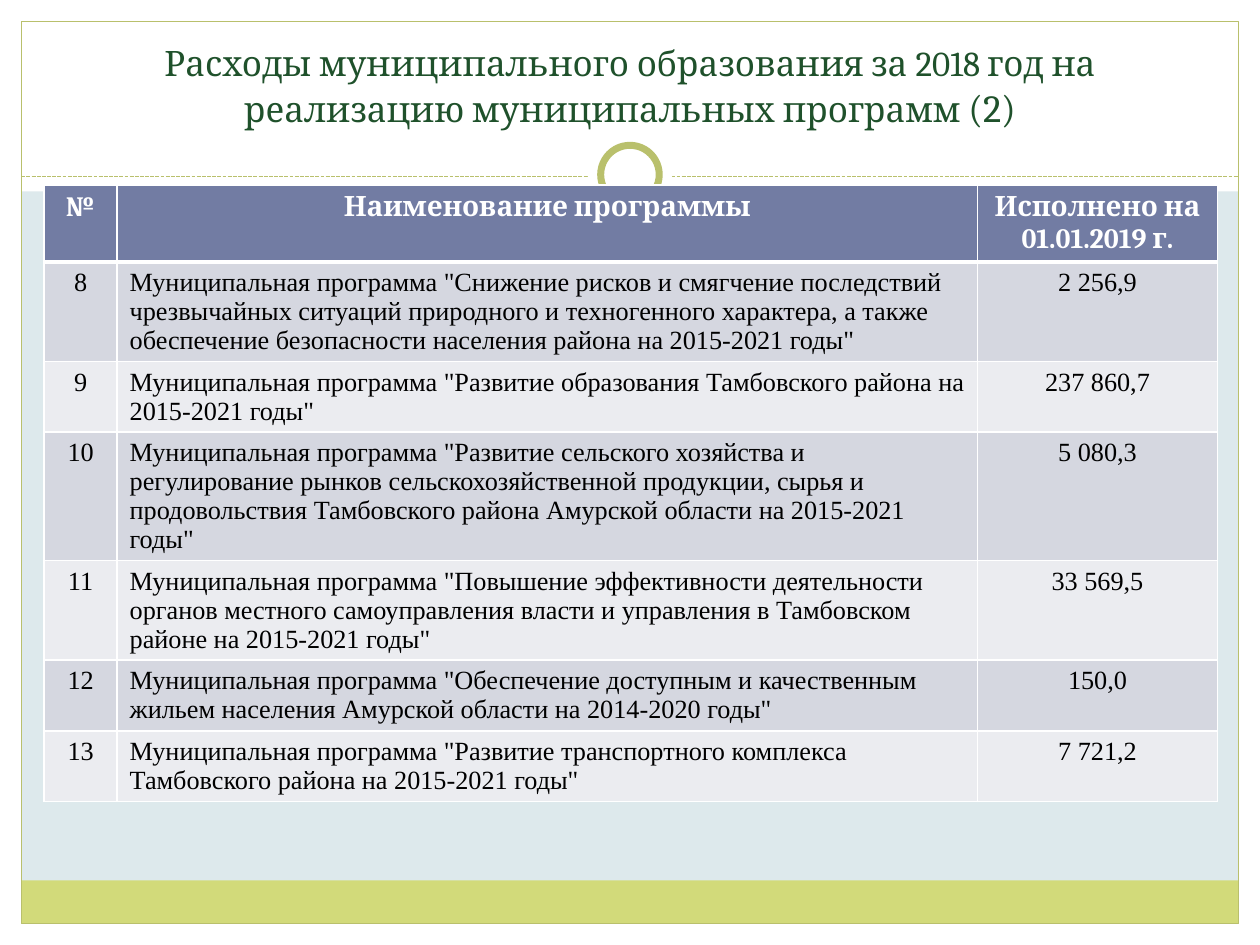
from lxml import etree
from pptx import Presentation
from pptx.dml.color import RGBColor
from pptx.enum.dml import MSO_LINE
from pptx.enum.shapes import MSO_CONNECTOR, MSO_SHAPE
from pptx.enum.text import MSO_ANCHOR, MSO_AUTO_SIZE, PP_ALIGN
from pptx.oxml.ns import qn
from pptx.util import Cm, Pt

RECTANGLE, OVAL = MSO_SHAPE.RECTANGLE, MSO_SHAPE.OVAL
STRAIGHT, DASH = MSO_CONNECTOR.STRAIGHT, MSO_LINE.SQUARE_DOT
CENTER, LEFT = PP_ALIGN.CENTER, PP_ALIGN.LEFT
BOTTOM, NO_FIT = MSO_ANCHOR.BOTTOM, MSO_AUTO_SIZE.NONE

WHITE = RGBColor(0xFF, 0xFF, 0xFF)
BLACK = RGBColor(0x00, 0x00, 0x00)
BACKGROUND = RGBColor(0xDD, 0xE9, 0xEC)
LIME = RGBColor(0xD2, 0xDA, 0x7A)
OLIVE = RGBColor(0xB9, 0xC0, 0x6C)
DARK_GREEN = RGBColor(0x1F, 0x51, 0x2B)
HEADER_FILL = RGBColor(0x72, 0x7C, 0xA3)
BAND_FILLS = (RGBColor(0xD5, 0xD7, 0xE0), RGBColor(0xEB, 0xEC, 0xF0))

COLUMN_WIDTHS = (1.47, 17.35, 4.83)
ROW_HEIGHT = 1.04
HEADER = ("№", "Наименование программы", "Исполнено на 01.01.2019 г.")
PROGRAMS = (
    ("8", "Снижение рисков и смягчение последствий чрезвычайных ситуаций природного "
     "и техногенного характера, а также обеспечение безопасности населения района "
     "на 2015-2021 годы", "2 256,9"),
    ("9", "Развитие образования Тамбовского района на 2015-2021 годы", "237 860,7"),
    ("10", "Развитие сельского хозяйства и регулирование рынков сельскохозяйственной "
     "продукции, сырья и продовольствия Тамбовского района Амурской области "
     "на 2015-2021 годы", "5 080,3"),
    ("11", "Повышение эффективности деятельности органов местного самоуправления "
     "власти и управления в Тамбовском районе на 2015-2021 годы", "33 569,5"),
    ("12", "Обеспечение доступным и качественным жильем населения Амурской области "
     "на 2014-2020 годы", "150,0"),
    ("13", "Развитие транспортного комплекса Тамбовского района на 2015-2021 годы",
     "7 721,2"),
)


def add_plain_shape(slide, kind, box, fill=None, line=None, line_width=0.75):
    """Add a shadowless shape with an optional fill and outline."""
    shape = slide.shapes.add_shape(kind, *(Cm(length) for length in box))
    shape.shadow.inherit = False
    if fill is None:
        shape.fill.background()
    else:
        shape.fill.solid()
        shape.fill.fore_color.rgb = fill
    if line is None:
        shape.line.fill.background()
    else:
        shape.line.color.rgb = line
        shape.line.width = Pt(line_width)


def add_frame(slide, box, margin=0.43, header_height=3.86, footer_height=0.87):
    """Draw the white margins, the footer band and the outline inside the box."""
    left, top, width, height = box
    right, bottom = left + width, top + height
    inner_width = width - 2 * margin
    for white_box in (
        (left, bottom - margin, width, margin),
        (left, top, width, header_height),
        (left, top, margin, height),
        (right - margin, top, margin, height),
    ):
        add_plain_shape(slide, RECTANGLE, white_box, WHITE)
    footer_top = bottom - margin - footer_height
    add_plain_shape(slide, RECTANGLE,
                    (left + margin, footer_top, inner_width, footer_height), LIME)
    add_plain_shape(slide, RECTANGLE,
                    (left + margin, top + margin, inner_width, height - 2 * margin),
                    line=OLIVE)


def add_divider(slide, box):
    """Draw a dashed line with a ring at its middle, the ring as tall as the box."""
    left, top, width, height = box
    line_top = Cm(top + 0.89)
    connector = slide.shapes.add_connector(
        STRAIGHT, Cm(left), line_top, Cm(left + width), line_top)
    connector.line.color.rgb = OLIVE
    connector.line.width = Pt(0.75)
    connector.line.dash_style = DASH
    etree.SubElement(connector.element.spPr, qn("a:effectLst"))
    ring_left, inset = left + (width - height) / 2, 0.26
    ring_size = height - 2 * inset
    add_plain_shape(slide, OVAL, (ring_left, top, height, height), WHITE)
    add_plain_shape(slide, OVAL,
                    (ring_left + inset, top + inset, ring_size, ring_size),
                    WHITE, OLIVE, 4)


def set_title(slide, box):
    """Place the title above the frame and format its two runs."""
    title = slide.shapes.title
    slide.shapes.element.append(title.element)
    title.left, title.top, title.width, title.height = (Cm(length) for length in box)
    text_frame = title.text_frame
    text_frame.auto_size = NO_FIT
    text_frame.word_wrap = True
    text_frame.vertical_anchor = BOTTOM
    paragraph = text_frame.paragraphs[0]
    paragraph.alignment = CENTER
    paragraph.font.name = "Cambria"
    paragraph.font.color.rgb = DARK_GREEN
    for text, size in (
        ("Расходы муниципального образования за 2018 год на реализацию "
         "муниципальных программ ", 20),
        ("(2)", 22),
    ):
        run = paragraph.add_run()
        run.text = text
        run.font.size = Pt(size)


def set_borders(cell, bottom_width):
    """Give the cell white borders, with its own width at the bottom."""
    properties = cell._tc.get_or_add_tcPr()
    for index, side in enumerate(("lnL", "lnR", "lnT", "lnB")):
        width = bottom_width if side == "lnB" else 1
        border = etree.Element(qn(f"a:{side}"), w=str(Pt(width)))
        fill = etree.SubElement(border, qn("a:solidFill"))
        etree.SubElement(fill, qn("a:srgbClr"), val=str(WHITE))
        properties.insert(index, border)


def fill_cell(cell, text, fill, alignment, is_header):
    """Write the text of a cell and format it as header or body."""
    cell.text = text
    cell.fill.solid()
    cell.fill.fore_color.rgb = fill
    paragraph = cell.text_frame.paragraphs[0]
    paragraph.alignment = alignment
    paragraph.font.name = "Cambria" if is_header else "Times New Roman"
    paragraph.font.size = Pt(16 if is_header else 15)
    paragraph.font.bold = is_header
    paragraph.font.color.rgb = WHITE if is_header else BLACK
    set_borders(cell, 3 if is_header else 1)


def add_program_table(slide, box):
    """Add the table of programs; its rows grow with their text."""
    rows = [HEADER] + [
        (number, f'Муниципальная программа "{name}"', amount)
        for number, name, amount in PROGRAMS
    ]
    frame = slide.shapes.add_table(
        len(rows), len(HEADER), *(Cm(length) for length in box))
    table = frame.table
    for column, width in zip(table.columns, COLUMN_WIDTHS):
        column.width = Cm(width)
    for row_index, values in enumerate(rows):
        is_header = row_index == 0
        table.rows[row_index].height = Cm(ROW_HEIGHT)
        fill = HEADER_FILL if is_header else BAND_FILLS[(row_index - 1) % 2]
        for column_index, text in enumerate(values):
            alignment = LEFT if column_index == 1 and not is_header else CENTER
            fill_cell(table.cell(row_index, column_index), text, fill,
                      alignment, is_header)
    frame.height = Cm(box[3])


def main():
    """Build the slide and save it."""
    presentation = Presentation()
    presentation.slide_width, presentation.slide_height = Cm(25.4), Cm(19.05)
    slide = presentation.slides.add_slide(presentation.slide_layouts[5])
    slide.background.fill.solid()
    slide.background.fill.fore_color.rgb = BACKGROUND
    add_frame(slide, (0, 0, 25.4, 19.05))
    add_divider(slide, (0.43, 2.67, 24.54, 1.7))
    set_title(slide, (0.85, 0.64, 23.7, 2.11))
    add_program_table(slide, (0.89, 3.73, 23.65, 13.28))
    presentation.save("out.pptx")


if __name__ == "__main__":
    main()
